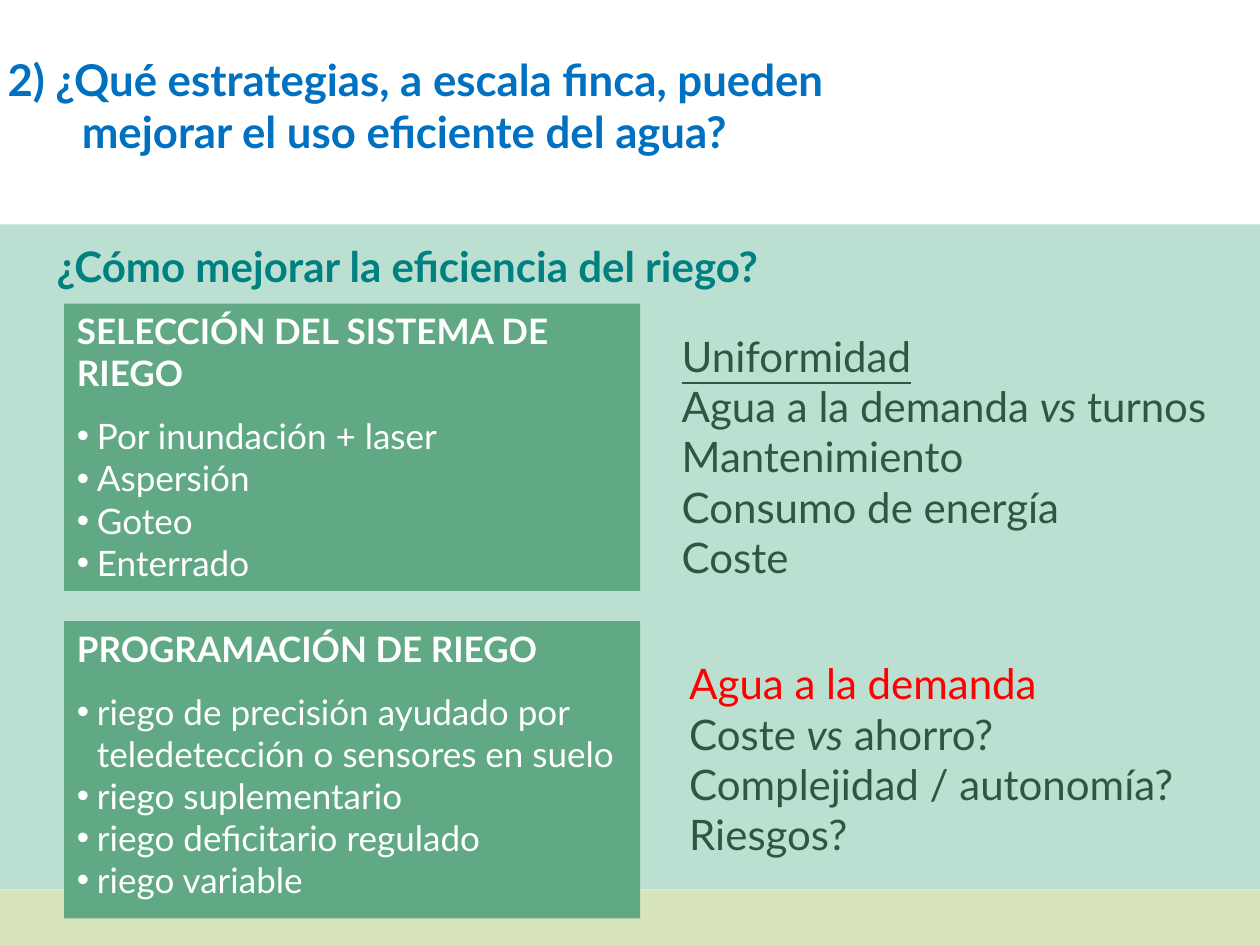
from lxml import etree
from pptx import Presentation
from pptx.dml.color import RGBColor
from pptx.enum.shapes import MSO_SHAPE
from pptx.enum.text import MSO_ANCHOR, MSO_AUTO_SIZE, PP_ALIGN
from pptx.oxml.ns import qn
from pptx.util import Inches, Pt

RECTANGLE = MSO_SHAPE.RECTANGLE
TOP, MIDDLE = MSO_ANCHOR.TOP, MSO_ANCHOR.MIDDLE
LEFT = PP_ALIGN.LEFT
NO_FIT = MSO_AUTO_SIZE.NONE
COMPARISON_LAYOUT = 4
FONT = "Lato"
WHITE, BLUE, TEAL, RED = "FFFFFF", "0070C0", "008080", "FF0000"
DARK_GREEN, PANEL_GREEN = "2F5642", "61A984"

# Content
TITLE = "2) ¿Qué estrategias, a escala finca, pueden\nmejorar el uso eficiente del agua?"
QUESTION = "¿Cómo mejorar la eficiencia del riego?"
BANDS = [(1.78, 5.28, "BBDFD0"), (7.06, 0.44, "D7E4BD")]  # top, height, colour
TOPICS = [
    {
        "heading": "SELECCIÓN DEL SISTEMA DE RIEGO",
        "options": ["Por inundación + laser", "Aspersión", "Goteo", "Enterrado"],
        "panel": (0.51, 2.41, 4.57, 2.28),
        "issues": ["Uniformidad", "Agua a la demanda vs turnos", "Mantenimiento",
                   "Consumo de energía", "Coste"],
        "first_issue": {"underline": True},
        "list": (5.31, 2.57, 4.69, 2.28),
    },
    {
        "heading": "PROGRAMACIÓN DE RIEGO",
        "options": ["riego de precisión ayudado por\nteledetección o sensores en suelo",
                    "riego suplementario", "riego deficitario regulado", "riego variable"],
        "panel": (0.51, 4.93, 4.57, 2.36),
        "issues": ["Agua a la demanda", "Coste vs ahorro?", "Complejidad / autonomía?",
                   "Riesgos?"],
        "first_issue": {"color": RED},
        "list": (5.37, 5.17, 4.51, 1.81),
    },
]


def rgb(value):
    return RGBColor.from_string(value)


def prepare(box, area, anchor=TOP):
    box.left, box.top, box.width, box.height = map(Inches, area)
    frame = box.text_frame
    frame.word_wrap = True
    frame.auto_size = NO_FIT
    frame.vertical_anchor = anchor
    return frame


def write(frame, text, size, color, bold=False, underline=False, hang=0, bullet=None, after=0):
    """Add a paragraph; the word "vs" is set in italics."""
    first = not frame.paragraphs[0].runs
    para = frame.paragraphs[0] if first else frame.add_paragraph()
    properties = para._p.get_or_add_pPr()
    properties.set("marL", str(Inches(hang)))
    properties.set("indent", str(-Inches(hang)))
    para.alignment = LEFT
    para.line_spacing = 1.0
    para.space_before, para.space_after = Pt(0), Pt(after)
    if bullet:
        etree.SubElement(properties, qn("a:buFont"), typeface="Arial")
        etree.SubElement(properties, qn("a:buChar"), char=bullet)
    else:
        etree.SubElement(properties, qn("a:buNone"))
    font = para.font
    font.name, font.size, font.bold = FONT, Pt(size), bold
    font.underline = underline
    font.color.rgb = rgb(color)
    for number, line in enumerate(text.split("\n")):
        if number:
            para.add_line_break()
        before, versus, rest = line.partition(" vs ")
        if versus:
            para.add_run().text = before + " "
            span = para.add_run()
            span.text = "vs"
            span.font.italic = True
            para.add_run().text = " " + rest
        else:
            para.add_run().text = line


deck = Presentation()
deck.slide_width, deck.slide_height = Inches(10), Inches(7.5)
page = deck.slides.add_slide(deck.slide_layouts[COMPARISON_LAYOUT])

# Background bands, placed behind the placeholders
for position, (top, height, color) in enumerate(BANDS):
    band = page.shapes.add_shape(RECTANGLE, 0, Inches(top), deck.slide_width, Inches(height))
    band.shadow.inherit = False
    band.fill.solid()
    band.fill.fore_color.rgb = rgb(color)
    band.line.fill.background()
    page.shapes._spTree.insert(2 + position, band._element)

# Title and question
title = prepare(page.shapes.title, (-0.04, 0.21, 9, 1.25), MIDDLE)
write(title, TITLE, 25, BLUE, bold=True, hang=0.59)
question = prepare(page.shapes.add_textbox(0, 0, 0, 0), (0.35, 1.86, 7.09, 0.87))
write(question, QUESTION, 24, TEAL, bold=True)

# Green panels with their lists of issues
for number, topic in enumerate(TOPICS):
    panel = page.placeholders[1 + 2 * number]
    panel.fill.solid()
    panel.fill.fore_color.rgb = rgb(PANEL_GREEN)
    frame = prepare(panel, topic["panel"])
    write(frame, topic["heading"], 20, WHITE, bold=True, after=12)
    for option in topic["options"]:
        write(frame, option, 20, WHITE, hang=0.16, bullet="•")

    frame = prepare(page.placeholders[2 + 2 * number], topic["list"])
    for row, issue in enumerate(topic["issues"]):
        style = {"color": DARK_GREEN}
        if row == 0:
            style.update(topic["first_issue"])
        write(frame, issue, 24, **style)

deck.save("out.pptx")
